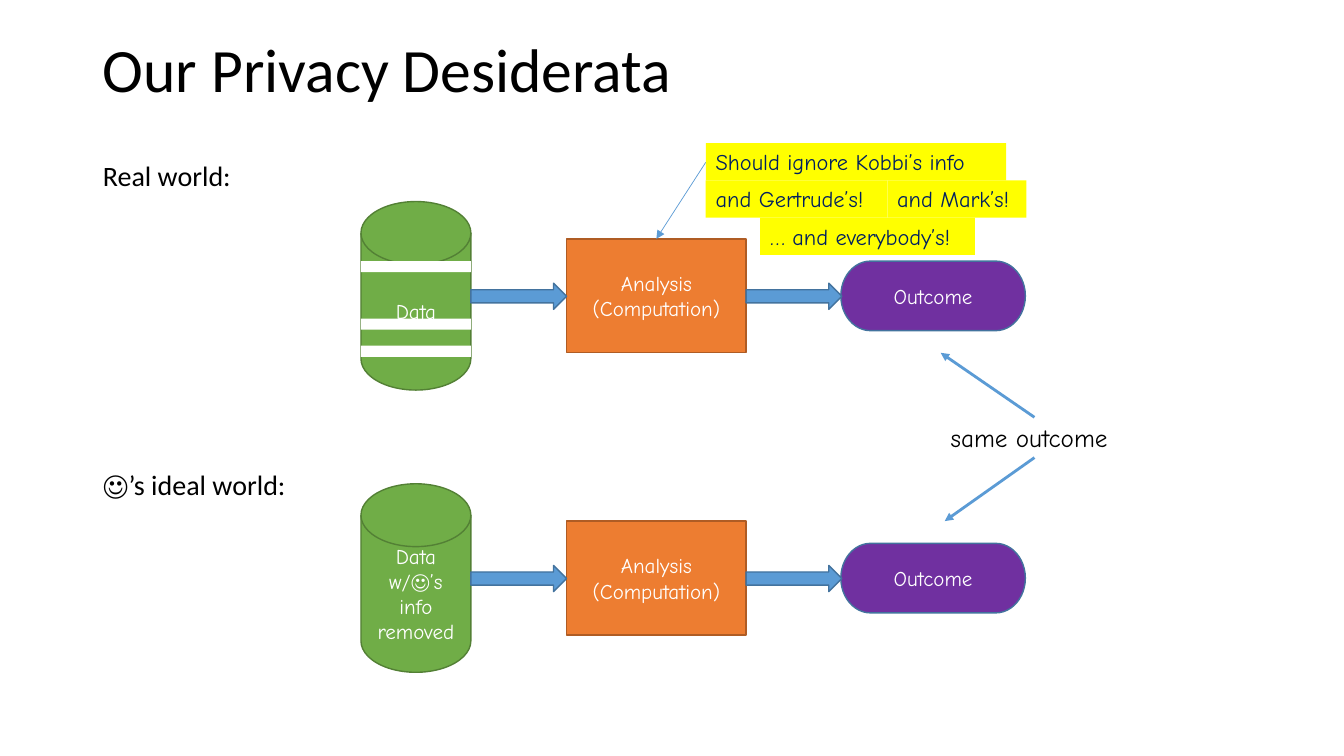
from lxml import etree
from pptx import Presentation
from pptx.dml.color import RGBColor
from pptx.enum.shapes import MSO_CONNECTOR, MSO_SHAPE
from pptx.enum.text import MSO_ANCHOR, MSO_AUTO_SIZE, PP_ALIGN
from pptx.oxml.ns import qn
from pptx.util import Inches, Pt

DISK = MSO_SHAPE.FLOWCHART_MAGNETIC_DISK
PROCESS = MSO_SHAPE.FLOWCHART_PROCESS
TERMINATOR = MSO_SHAPE.FLOWCHART_TERMINATOR
ARROW = MSO_SHAPE.RIGHT_ARROW
RECTANGLE = MSO_SHAPE.RECTANGLE
STRAIGHT = MSO_CONNECTOR.STRAIGHT
LEFT, CENTER = PP_ALIGN.LEFT, PP_ALIGN.CENTER
MIDDLE, TOP = MSO_ANCHOR.MIDDLE, MSO_ANCHOR.TOP
NO_AUTOFIT = MSO_AUTO_SIZE.NONE


def color(hex_string):
    return RGBColor.from_string(hex_string)


class SlideBuilder:
    """Hold the slide and its style, and draw each kind of element."""

    plain_font = "Calibri"
    hand_font = "Comic Neue"
    black, white, navy = "000000", "FFFFFF", "002060"
    green, dark_green = "70AD47", "538035"
    orange, dark_orange = "ED7D31", "AF5C24"
    blue, dark_blue = "5B9BD5", "43739E"
    purple, yellow = "7030A0", "FFFF00"

    def __init__(self, page):
        self.page = page

    def format_text(self, frame, size, font, text_color, align=LEFT):
        for para in frame.paragraphs:
            para.alignment = align
            for span in para.runs:
                span.font.size = Pt(size)
                span.font.name = font
                span.font.color.rgb = color(text_color)

    def place(self, holder, left, top, width, height, anchor):
        holder.left, holder.top = Inches(left), Inches(top)
        holder.width, holder.height = Inches(width), Inches(height)
        holder.text_frame.vertical_anchor = anchor
        holder.text_frame.auto_size = NO_AUTOFIT

    def title(self, text):
        holder = self.page.shapes.title
        self.place(holder, 0.92, -0.01, 11.5, 1.45, MIDDLE)
        holder.text_frame.text = text
        holder.text_frame.paragraphs[0].line_spacing = 0.9
        self.format_text(holder.text_frame, 44, self.plain_font, self.black)

    def body(self, paragraphs):
        holder = self.page.placeholders[1]
        self.place(holder, 0.92, 1.56, 11.5, 5.8, TOP)
        frame = holder.text_frame
        for index, (space_before, texts) in enumerate(paragraphs):
            para = frame.add_paragraph() if index else frame.paragraphs[0]
            para.line_spacing = 0.9
            para.space_before = Pt(space_before)
            for text in texts:
                para.add_run().text = text
            properties = para._p.get_or_add_pPr()
            properties.set("marL", "0")
            properties.set("indent", "0")
            etree.SubElement(properties, qn("a:buNone"))
        self.format_text(frame, 20, self.plain_font, self.black)
        for para in frame.paragraphs:
            for span in para.runs:
                if span.text == "☺":
                    span.font.name = self.hand_font

    def shape(self, kind, left, top, width, height, fill, line=None, text=""):
        box = self.page.shapes.add_shape(
            kind, Inches(left), Inches(top), Inches(width), Inches(height))
        box.shadow.inherit = False
        box.fill.solid()
        box.fill.fore_color.rgb = color(fill)
        if line:
            box.line.color.rgb = color(line)
            box.line.width = Pt(1)
        else:
            box.line.fill.background()
        if text:
            frame = box.text_frame
            frame.text = text
            frame.vertical_anchor = MIDDLE
            self.format_text(frame, 15, self.hand_font, self.white, CENTER)
        return box

    def note(self, left, top, width, text):
        box = self.shape(RECTANGLE, left, top, width, 0.37, self.yellow)
        frame = box.text_frame
        frame.text = text
        frame.word_wrap = False
        frame.vertical_anchor = TOP
        self.format_text(frame, 16, self.hand_font, self.navy)

    def label(self, left, top, width, height, text):
        box = self.page.shapes.add_textbox(
            Inches(left), Inches(top), Inches(width), Inches(height))
        box.text_frame.text = text
        box.text_frame.word_wrap = False
        self.format_text(box.text_frame, 18, self.hand_font, self.black)

    def pointer(self, start, end, width):
        line = self.page.shapes.add_connector(
            STRAIGHT, *(Inches(value) for value in start + end))
        line.line.color.rgb = color(self.blue)
        line.line.width = Pt(width)
        etree.SubElement(line.line._get_or_add_ln(), qn("a:tailEnd"), type="triangle")
        etree.SubElement(line._element.spPr, qn("a:effectLst"))

    def pipeline(self, top, data_text):
        self.shape(DISK, 3.58, top, 1.09, 1.87, self.green, self.dark_green, data_text)
        self.shape(PROCESS, 5.62, top + 0.37, 1.78, 1.13, self.orange,
                   self.dark_orange, "Analysis\n(Computation)")
        self.shape(TERMINATOR, 8.34, top + 0.59, 1.83, 0.69, self.purple,
                   self.dark_blue, "Outcome")
        for left in (4.67, 7.4):
            self.shape(ARROW, left, top + 0.81, 0.95, 0.26, self.blue, self.dark_blue)


def main():
    deck = Presentation()
    deck.slide_width, deck.slide_height = Inches(13.33), Inches(7.5)
    slide = SlideBuilder(deck.slides.add_slide(deck.slide_layouts[1]))

    slide.title("Our Privacy Desiderata")
    slide.body([(10, ["Real world:"]), (199, ["☺", "’s ideal world:"])])
    slide.pipeline(2, "Data")
    slide.pipeline(4.8, "Data\nw/☺’s info removed")

    slide.label(9.33, 4.14, 1.85, 0.4, "same outcome")
    slide.pointer((10.26, 4.14), (9.33, 3.5), 2)
    slide.pointer((10.26, 4.54), (9.37, 5.17), 2)

    slide.pointer((7, 1.61), (6.51, 2.37), 0.5)
    for left, top, width, text in (
        (7, 1.42, 2.98, "Should ignore Kobbi’s info"),
        (7, 1.79, 1.8, "and Gertrude’s!"),
        (8.8, 1.79, 1.38, "and Mark’s!"),
        (7.54, 2.16, 2.13, "… and everybody’s!"),
    ):
        slide.note(left, top, width, text)

    for top in (2.59, 3.16, 3.43):
        slide.shape(RECTANGLE, 3.58, top, 1.09, 0.11, slide.white)

    deck.save("out.pptx")


if __name__ == "__main__":
    main()
